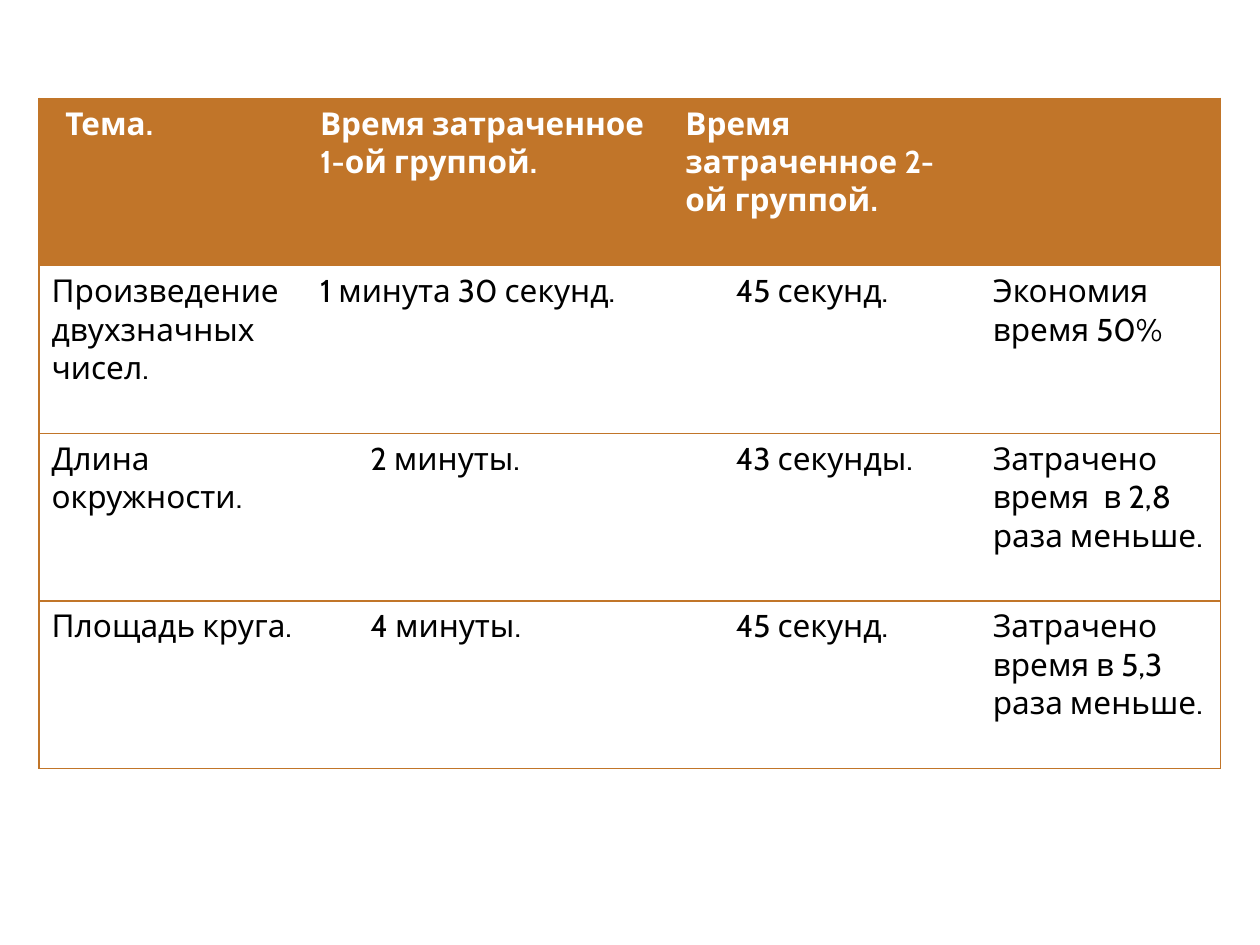
"""Build a slide with a table comparing the time two groups spent on three topics."""
from lxml.etree import SubElement
from pptx import Presentation
from pptx.dml.color import RGBColor
from pptx.oxml.ns import qn
from pptx.util import Inches, Pt

COLORS = {"accent": "C17529", "header_text": "FFFFFF", "body": "FFFFFF", "body_text": "000000"}
COLUMN_WIDTHS = [2.13, 2.9, 2.44, 1.91]
ROW_HEIGHT = 1.33
CELL_MARGIN = 0.1
RESULTS = [
    ["Тема.", "Время затраченное 1-ой группой.", "Время затраченное 2-ой группой.", ""],
    ["Произведение двухзначных чисел.", "1 минута 30 секунд.", "45 секунд.", "Экономия время 50%"],
    ["Длина окружности.", "2 минуты.", "43 секунды.", "Затрачено время  в 2,8 раза меньше."],
    ["Площадь круга.", "4 минуты.", "45 секунд.", "Затрачено время в 5,3 раза меньше."],
]
INDENTS = {(0, 0): 0.11, (1, 2): 0.4, (2, 1): 0.4, (2, 2): 0.4, (3, 1): 0.4, (3, 2): 0.4}


def add_border(cell, side, visible):
    line = SubElement(cell._tc.get_or_add_tcPr(), qn(f"a:ln{side}"), w=str(Pt(0.79)))
    if visible:
        paint = SubElement(line, qn("a:solidFill"))
        SubElement(paint, qn("a:srgbClr"), val=COLORS["accent"])
    else:
        SubElement(line, qn("a:noFill"))


presentation = Presentation()
presentation.slide_width = Inches(10)
presentation.slide_height = Inches(7.5)
slide = presentation.slides.add_slide(presentation.slide_layouts[6])

time_table = slide.shapes.add_table(
    len(RESULTS), len(COLUMN_WIDTHS), Inches(0.31), Inches(0.78),
    Inches(sum(COLUMN_WIDTHS)), Inches(ROW_HEIGHT * len(RESULTS)),
).table
time_table.horz_banding = False
for column, width in zip(time_table.columns, COLUMN_WIDTHS):
    column.width = Inches(width)
for row in time_table.rows:
    row.height = Inches(ROW_HEIGHT)

for row_index, result in enumerate(RESULTS):
    is_header = row_index == 0
    for column_index, wording in enumerate(result):
        cell = time_table.cell(row_index, column_index)
        add_border(cell, "L", column_index == 0)
        add_border(cell, "R", column_index == len(result) - 1)
        add_border(cell, "T", True)
        add_border(cell, "B", True)
        cell.fill.solid()
        cell.fill.fore_color.rgb = RGBColor.from_string(COLORS["accent" if is_header else "body"])
        cell.margin_left = Inches(CELL_MARGIN + INDENTS.get((row_index, column_index), 0))
        cell.margin_right = Inches(CELL_MARGIN)
        cell.text_frame.text = wording
        font = cell.text_frame.paragraphs[0].font
        for run in cell.text_frame.paragraphs[0].runs:
            font = run.font
        font.name = "Cabin"
        font.size = Pt(18)
        font.bold = is_header
        font.color.rgb = RGBColor.from_string(COLORS["header_text" if is_header else "body_text"])

presentation.save("out.pptx")
